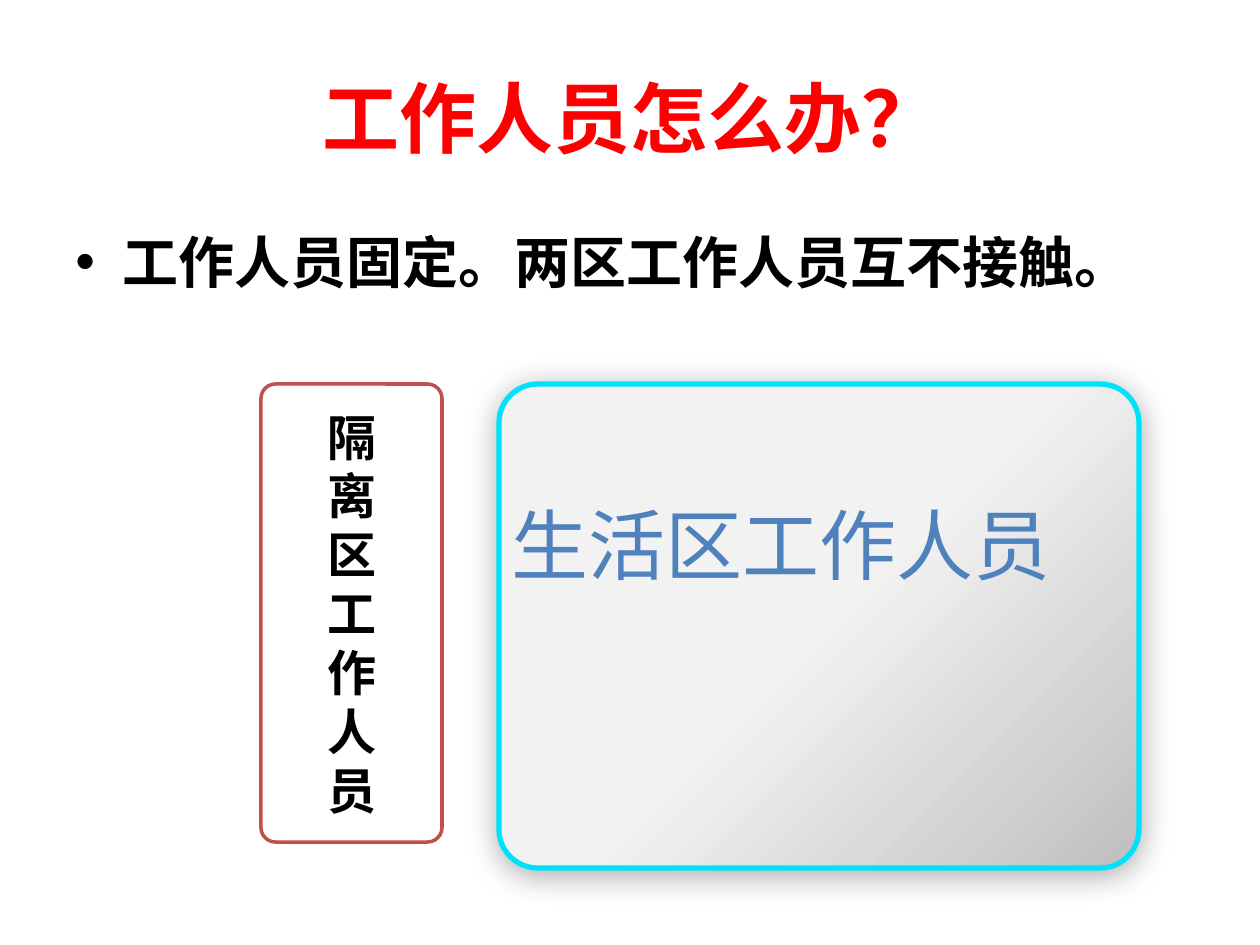
"""Build the slide on how staff of the two zones are kept apart."""
from lxml.etree import SubElement
from pptx import Presentation
from pptx.dml.color import RGBColor
from pptx.enum.shapes import MSO_SHAPE as Shape
from pptx.enum.text import MSO_ANCHOR as Anchor, PP_ALIGN as Align
from pptx.oxml.ns import qn
from pptx.util import Emu, Pt

COLORS = {
    "title": "FF0000", "text": "000000", "living": "4F81BD", "living_line": "00E1FA",
    "light": "F2F2F2", "dark": "BFBFBF", "isolation_line": "C0504D", "white": "FFFFFF",
}


def px(*lengths):
    return [Emu(round(length * 914400 / 126)) for length in lengths]


def add_span(para, text, size, color, bold=True, font="Calibri"):
    span = para.add_run()
    span.text = text
    span.font.name = font
    span.font.size = Pt(size)
    span.font.bold = bold
    span.font.color.rgb = RGBColor.from_string(COLORS[color])


deck = Presentation()
deck.slide_width, deck.slide_height = px(1260, 945)
page = deck.slides.add_slide(deck.slide_layouts[6])

body = page.shapes.add_textbox(*px(63, 221, 1134, 624)).text_frame
body.word_wrap = True
para = body.paragraphs[0]
props = para._p.get_or_add_pPr()
indent = px(47)[0]
props.set("marL", str(indent))
props.set("indent", str(-indent))
SubElement(props, qn("a:buFont"), typeface="Arial")
SubElement(props, qn("a:buChar"), char="•")
add_span(para, "工作人员固定。两区工作人员互不接触。", 32, "text")

title = page.shapes.add_textbox(*px(178, 38, 906, 157)).text_frame
title.word_wrap = True
title.vertical_anchor = Anchor.MIDDLE
title.paragraphs[0].alignment = Align.CENTER
add_span(title.paragraphs[0], "工作人员怎么办？", 44, "title")

zones = []
for place, line, weight in (
    ((499, 384, 640, 484), "living_line", 3),
    ((261, 384, 181, 458), "isolation_line", 2),
):
    zone = page.shapes.add_shape(Shape.ROUNDED_RECTANGLE, *px(*place))
    zone.adjustments[0] = 0.08
    zone.shadow.inherit = False
    zone.line.color.rgb = RGBColor.from_string(COLORS[line])
    zone.line.width = Pt(weight)
    zones.append(zone)
living, isolation = zones

living.fill.gradient()
living.fill.gradient_angle = 315
for stop, position, color in zip(living.fill.gradient_stops, (0.5, 1), ("light", "dark")):
    stop.position = position
    stop.color.rgb = RGBColor.from_string(COLORS[color])
effects = living._element.spPr.find(qn("a:effectLst"))
shadow = SubElement(effects, qn("a:outerShdw"), blurRad=str(Pt(17.8)), dist=str(Pt(3)),
                    dir=str(87 * 60000), algn="ctr", rotWithShape="0")
shade = SubElement(shadow, qn("a:srgbClr"), val=COLORS["text"])
SubElement(shade, qn("a:alpha"), val="33000")

isolation.fill.solid()
isolation.fill.fore_color.rgb = RGBColor.from_string(COLORS["white"])
frame = isolation.text_frame
frame.word_wrap = True
frame.vertical_anchor = Anchor.MIDDLE
for index, letter in enumerate("隔离区工作人员"):
    para = frame.add_paragraph() if index else frame.paragraphs[0]
    para.alignment = Align.CENTER
    add_span(para, letter, 28, "text")

label = page.shapes.add_textbox(*px(499, 491, 592, 106)).text_frame
label.word_wrap = True
add_span(label.paragraphs[0], "生活区工作人员", 44, "living", False, "Arial")

deck.save("out.pptx")
